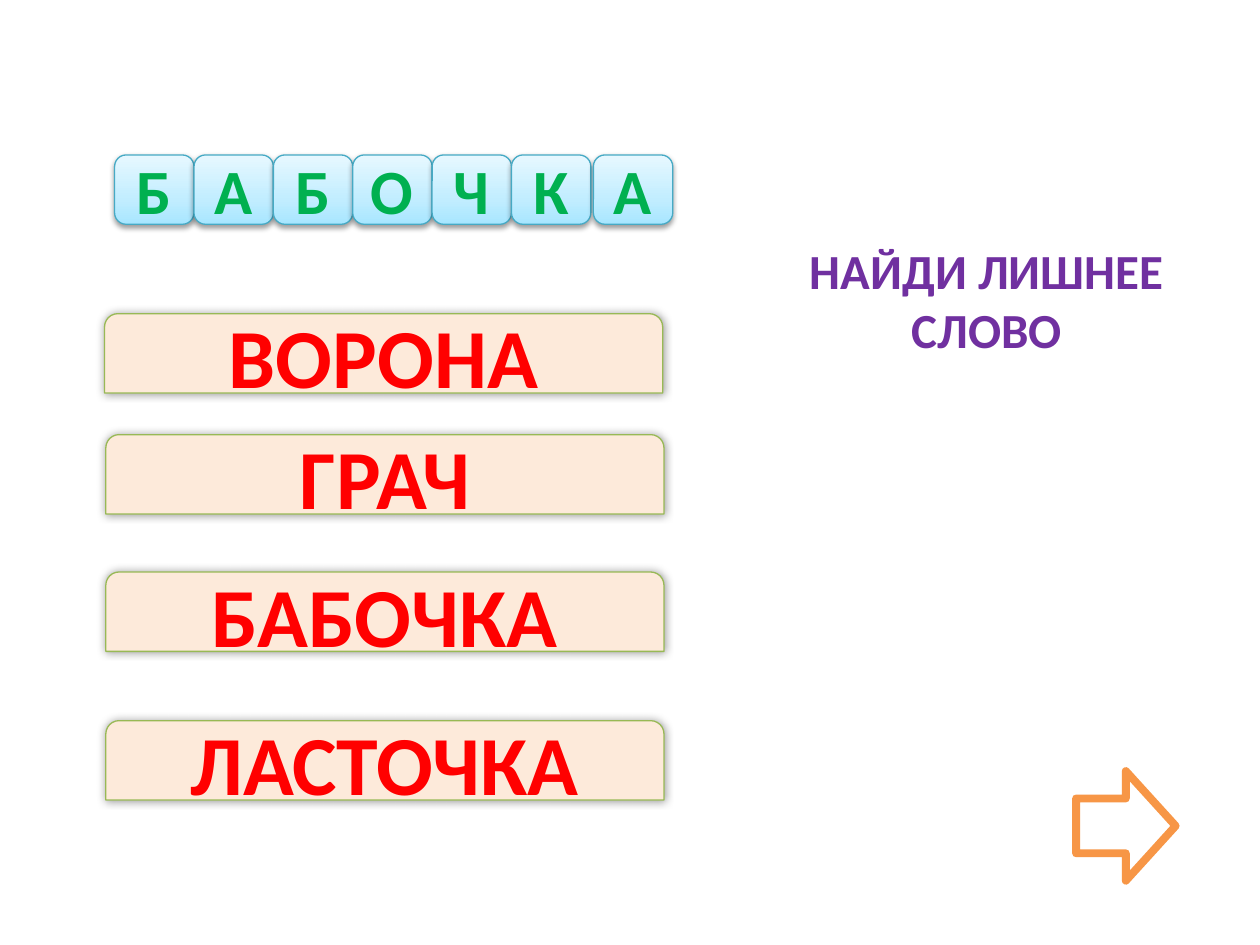
from copy import deepcopy
from dataclasses import dataclass

from lxml.etree import SubElement
from pptx import Presentation
from pptx.dml.color import RGBColor
from pptx.enum.shapes import MSO_SHAPE
from pptx.enum.text import MSO_ANCHOR, MSO_AUTO_SIZE, PP_ALIGN
from pptx.oxml.ns import qn
from pptx.util import Pt

SCALE = 9144  # EMU per px, 100 px to the inch
FONT = "Calibri"


@dataclass
class Tile:
    char: str
    left: int


@dataclass
class Card:
    word: str
    left: int
    top: int


@dataclass
class Shade:
    alpha: int
    blur: float
    dist: float
    angle: int


TILE_W, TILE_H, TILE_TOP = 63, 55, 123
CARD_W, CARD_H = 443, 63
WIDTHS = {"Б": 48, "А": 51, "О": 54, "Ч": 49, "К": 48}
STOPS = [(0, "A7E6FF"), (0.35, "C1EDFF"), (1, "E7F8FF")]

# The last tile stands slightly apart from the row
TILES = [Tile(char, 91 + i * TILE_W) for i, char in enumerate("БАБОЧК")]
TILES.append(Tile("А", 471))
CARDS = [
    Card("ВОРОНА", 83, 249),
    Card("ГРАЧ", 84, 345),
    Card("БАБОЧКА", 84, 454),
    Card("ЛАСТОЧКА", 84, 572),
]


def px(*nums: int) -> list[int]:
    return [round(num * SCALE) for num in nums]


def color(code: str) -> RGBColor:
    return RGBColor.from_string(code)


def write(shape, text: str, size: int, code: str, align=None) -> None:
    frame = shape.text_frame
    frame.text = text
    par = frame.paragraphs[0]
    par.alignment = align
    font = par.runs[0].font
    font.name, font.size, font.bold = FONT, Pt(size), True
    font.color.rgb = color(code)


def draw(shapes, kind, box: list[int], line: str, width: float):
    shape = shapes.add_shape(kind, *box)
    shape.shadow.inherit = False
    shape.line.color.rgb = color(line)
    shape.line.width = Pt(width)
    return shape


def paint(shape, code: str) -> None:
    shape.fill.solid()
    shape.fill.fore_color.rgb = color(code)


def blend(shape) -> None:
    fill = shape.fill
    fill.gradient()
    fill.gradient_angle = 90
    stops = shape.element.spPr.find(".//" + qn("a:gsLst"))
    stops.append(deepcopy(stops[-1]))
    for stop, (place, code) in zip(fill.gradient_stops, STOPS):
        stop.position = place
        stop.color.rgb = color(code)


def cast(shape, shade: Shade) -> None:
    effects = shape.element.spPr.find(qn("a:effectLst"))
    outer = SubElement(
        effects, qn("a:outerShdw"),
        blurRad=str(Pt(shade.blur)), dist=str(Pt(shade.dist)),
        dir=str(shade.angle * 60000), rotWithShape="0",
    )
    tint = SubElement(outer, qn("a:srgbClr"), val="000000")
    SubElement(tint, qn("a:alpha"), val=str(shade.alpha * 1000))


def add_tile(shapes, tile: Tile) -> None:
    box = px(tile.left, TILE_TOP, TILE_W, TILE_H)
    shape = draw(shapes, MSO_SHAPE.ROUNDED_RECTANGLE, box, "46AAC5", 0.75)
    blend(shape)
    cast(shape, Shade(38, 3.1, 1.6, 90))


def add_char(shapes, tile: Tile) -> None:
    width = WIDTHS[tile.char]
    left = tile.left + (TILE_W - width) / 2
    box = shapes.add_textbox(*px(left, 115, width, 71))
    box.text_frame.word_wrap = False
    box.text_frame.auto_size = MSO_AUTO_SIZE.SHAPE_TO_FIT_TEXT
    write(box, tile.char, 36, "00B050")


def add_card(shapes, card: Card) -> None:
    box = px(card.left, card.top, CARD_W, CARD_H)
    shape = draw(shapes, MSO_SHAPE.ROUND_2_SAME_RECTANGLE, box, "98B955", 0.75)
    paint(shape, "FDEADA")
    cast(shape, Shade(40, 5, 0, 0))
    shape.text_frame.vertical_anchor = MSO_ANCHOR.MIDDLE
    write(shape, card.word, 48, "FF0000", PP_ALIGN.CENTER)


def main() -> None:
    deck = Presentation()
    deck.slide_width, deck.slide_height = px(1000, 750)
    slide = deck.slides.add_slide(deck.slide_layouts[5])
    shapes = slide.shapes

    # Task heading
    title = shapes.title
    title.left, title.top, title.width, title.height = px(594, 186, 378, 104)
    title.text_frame.word_wrap = True
    title.text_frame.auto_size = MSO_AUTO_SIZE.SHAPE_TO_FIT_TEXT
    title.text_frame.vertical_anchor = MSO_ANCHOR.TOP
    write(title, "НАЙДИ ЛИШНЕЕ СЛОВО", 28, "7030A0", PP_ALIGN.CENTER)

    # Row of letter tiles
    row = shapes.add_group_shape()
    for tile in TILES:
        add_tile(row.shapes, tile)

    # Word cards
    for card in CARDS:
        add_card(shapes, card)

    # Letters over the tiles
    answer = shapes.add_group_shape()
    for tile in TILES:
        add_char(answer.shapes, tile)

    # Arrow to the next slide
    arrow = draw(shapes, MSO_SHAPE.RIGHT_ARROW, px(854, 612, 79, 87), "F79646", 4.5)
    paint(arrow, "FFFFFF")

    deck.save("out.pptx")


if __name__ == "__main__":
    main()
